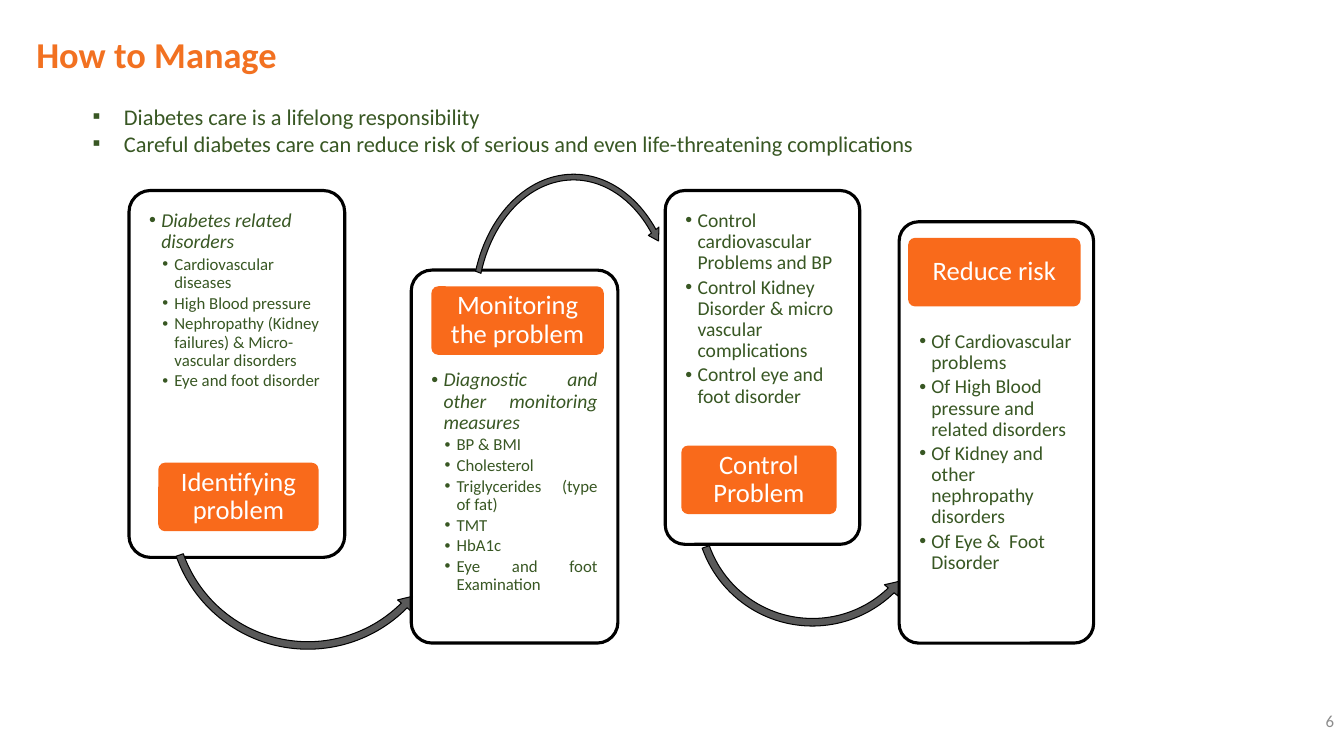
from pptx import Presentation
from pptx.dml.color import RGBColor
from pptx.enum.shapes import MSO_SHAPE
from pptx.enum.text import MSO_ANCHOR, MSO_AUTO_SIZE, PP_ALIGN
from pptx.oxml.ns import qn
from pptx.util import Inches, Pt
from lxml.etree import SubElement

# The slide is a grid of 40 columns by 22.5 rows, each a third of an inch
CELL = Inches(1) / 3
FONT = "Calibri"
ORANGE, GREEN, GREY = "F96A1B", "385723", "595959"
LABEL_ROWS = 2.04
PANEL_MARGIN = 0.18

INTRO = [
    "Diabetes care is a lifelong responsibility",
    "Careful diabetes care can reduce risk of serious and even life-threatening complications",
]

# Arrow angles are degrees: head width, head end, tail start
STAGES = [
    dict(panel=(3.84, 5.67, 6.42, 10.92), list_rows=(5.85, 8.22),
         label=("Identifying problem", 4.71, 13.77, 4.77),
         heading="Diabetes related disorders", align=PP_ALIGN.LEFT,
         items=["Cardiovascular diseases", "High Blood pressure",
                "Nephropathy (Kidney failures) & Micro-vascular disorders",
                "Eye and foot disorder"],
         arrow=(MSO_SHAPE.LEFT_CIRCULAR_ARROW, (4.86, 10.86, 8.61, 8.61),
                2.6, (5.25, 44.89, 160.46), 3)),
    dict(panel=(12.24, 8.04, 6.15, 11.1), list_rows=(10.59, 8.34),
         label=("Monitoring the problem", 12.84, 8.52, 5.13),
         heading="Diagnostic and other monitoring measures", align=PP_ALIGN.JUSTIFY,
         items=["BP & BMI", "Cholesterol", "Triglycerides (type of fat)",
                "TMT", "HbA1c", "Eye and foot Examination"],
         arrow=(MSO_SHAPE.CIRCULAR_ARROW, (13.92, 5.07, 6.3, 8.22),
                2.7, (5.5, 316.09, 200.78), 3.2)),
    dict(panel=(19.8, 5.67, 5.79, 10.53), list_rows=(5.85, 7.92),
         label=("Control Problem", 20.28, 13.26, 4.62),
         heading=None, align=PP_ALIGN.LEFT,
         items=["Control cardiovascular Problems and BP",
                "Control Kidney Disorder & micro vascular complications",
                "Control eye and foot disorder"],
         arrow=(MSO_SHAPE.LEFT_CIRCULAR_ARROW, (20.55, 11.52, 7.26, 7.26),
                3.1, (6.28, 45.91, 160.45), 3.6)),
    dict(panel=(26.76, 6.6, 5.79, 12.54), list_rows=(9.45, 9.51),
         label=("Reduce risk", 27.03, 7.08, 5.13),
         heading=None, align=PP_ALIGN.LEFT,
         items=["Of Cardiovascular problems",
                "Of High Blood pressure and related disorders",
                "Of Kidney and other nephropathy disorders",
                "Of Eye &  Foot Disorder"],
         arrow=None),
]


def color(hex_code):
    return RGBColor.from_string(hex_code)


def grid(*cells):
    return [round(cell * CELL) for cell in cells]


def place(shape, *cells):
    shape.left, shape.top, shape.width, shape.height = grid(*cells)


def set_frame(frame, side, edge, anchor=MSO_ANCHOR.TOP):
    frame.word_wrap = True
    frame.auto_size = MSO_AUTO_SIZE.NONE
    frame.margin_left = frame.margin_right = Inches(side)
    frame.margin_top = frame.margin_bottom = Inches(edge)
    frame.vertical_anchor = anchor


def write(para, text, size, hex_code, align=PP_ALIGN.LEFT, bold=False, italic=False):
    para.text = text
    para.alignment = align
    for span in para.runs:
        font = span.font
        font.name, font.size = FONT, Pt(size)
        font.bold, font.italic = bold, italic
        font.color.rgb = color(hex_code)


def add_bullet(para, symbol, indent, hanging, after=0):
    """Bullet with a hanging indent; after is a percentage of the line."""
    properties = para._p.get_or_add_pPr()
    properties.set("marL", str(Inches(indent)))
    properties.set("indent", str(-Inches(hanging)))
    spacing = SubElement(properties, qn("a:spcAft"))
    SubElement(spacing, qn("a:spcPct"), val=str(after * 1000))
    SubElement(properties, qn("a:buFont"), typeface="Arial")
    SubElement(properties, qn("a:buChar"), char=symbol)


def next_para(frame, index):
    return frame.paragraphs[0] if index == 0 else frame.add_paragraph()


def add_block(slide, preset, cells, fill, line=None, width=0):
    block = slide.shapes.add_shape(preset, *grid(*cells))
    block.shadow.inherit = False
    block.fill.solid()
    block.fill.fore_color.rgb = color(fill)
    if line:
        block.line.color.rgb = color(line)
        block.line.width = Pt(width)
    else:
        block.line.fill.background()
    return block


def add_panel(slide, cells):
    panel = add_block(slide, MSO_SHAPE.ROUNDED_RECTANGLE, cells, "FFFFFF", "000000", 2.25)
    panel.adjustments[0] = 0.1
    fill_color = panel._element.spPr.find(qn("a:solidFill"))[0]
    SubElement(fill_color, qn("a:alpha"), val="90000")


def add_stage_list(slide, stage):
    left, _, width, _ = stage["panel"]
    top, height = stage["list_rows"]
    box = slide.shapes.add_textbox(
        *grid(left + PANEL_MARGIN, top, width - 2 * PANEL_MARGIN, height))
    frame = box.text_frame
    set_frame(frame, 0.14, 0.14)
    heading = stage["heading"]
    for index, text in enumerate(([heading] if heading else []) + stage["items"]):
        para = next_para(frame, index)
        nested = bool(heading) and index > 0
        add_bullet(para, "•", 0.25 if nested else 0.12, 0.12, after=15)
        para.level = 2 if nested else 1
        para.line_spacing = 0.9
        write(para, text, 12 if nested else 14, GREEN, stage["align"],
              italic=text == heading)


def add_arrow(slide, preset, cells, thickness, angles, head):
    arrow = add_block(slide, preset, cells, GREY, "000000", 0.75)
    # Angles are stored in 60000ths of a degree, adjustments in 100000ths
    values = [thickness / 100, *(angle * 0.6 for angle in angles), head / 100]
    for index, value in enumerate(values):
        arrow.adjustments[index] = value


def add_label(slide, text, left, top, width):
    label = add_block(slide, MSO_SHAPE.ROUNDED_RECTANGLE,
                      (left, top, width, LABEL_ROWS), ORANGE)
    label.adjustments[0] = 0.1
    set_frame(label.text_frame, 0.06, 0.05, MSO_ANCHOR.MIDDLE)
    para = label.text_frame.paragraphs[0]
    para.line_spacing = 0.9
    write(para, text, 19, "FFFFFF", PP_ALIGN.CENTER)


def add_page_number(slide, number):
    box = slide.shapes.add_textbox(*grid(31, 20.85, 9, 1.2))
    set_frame(box.text_frame, 0.1, 0.05, MSO_ANCHOR.MIDDLE)
    write(box.text_frame.paragraphs[0], number, 12, "8C8C8C", PP_ALIGN.RIGHT)


def fill_title(title):
    place(title, 0.87, 0.9, 36, 1.56)
    set_frame(title.text_frame, 0.07, 0.04, MSO_ANCHOR.MIDDLE)
    para = title.text_frame.paragraphs[0]
    para.line_spacing = 0.9
    write(para, "How to Manage", 26, "F27121", bold=True)


def fill_intro(body):
    place(body, 2.46, 2.91, 25.98, 1.92)
    set_frame(body.text_frame, 0.1, 0.05)
    for index, text in enumerate(INTRO):
        para = next_para(body.text_frame, index)
        add_bullet(para, "▪", 0.31, 0.31)
        para.space_before = Pt(0)
        write(para, text, 16, GREEN)


def main():
    deck = Presentation()
    deck.slide_width, deck.slide_height = grid(40, 22.5)
    slide = deck.slides.add_slide(deck.slide_layouts[1])

    # Title, introduction and page number
    fill_title(slide.shapes.title)
    fill_intro(slide.placeholders[1])
    add_page_number(slide, "6")

    # Four stages, each leading to the next
    for stage in STAGES:
        add_panel(slide, stage["panel"])
        add_stage_list(slide, stage)
        if stage["arrow"]:
            add_arrow(slide, *stage["arrow"])
        add_label(slide, *stage["label"])

    deck.save("out.pptx")


if __name__ == "__main__":
    main()
